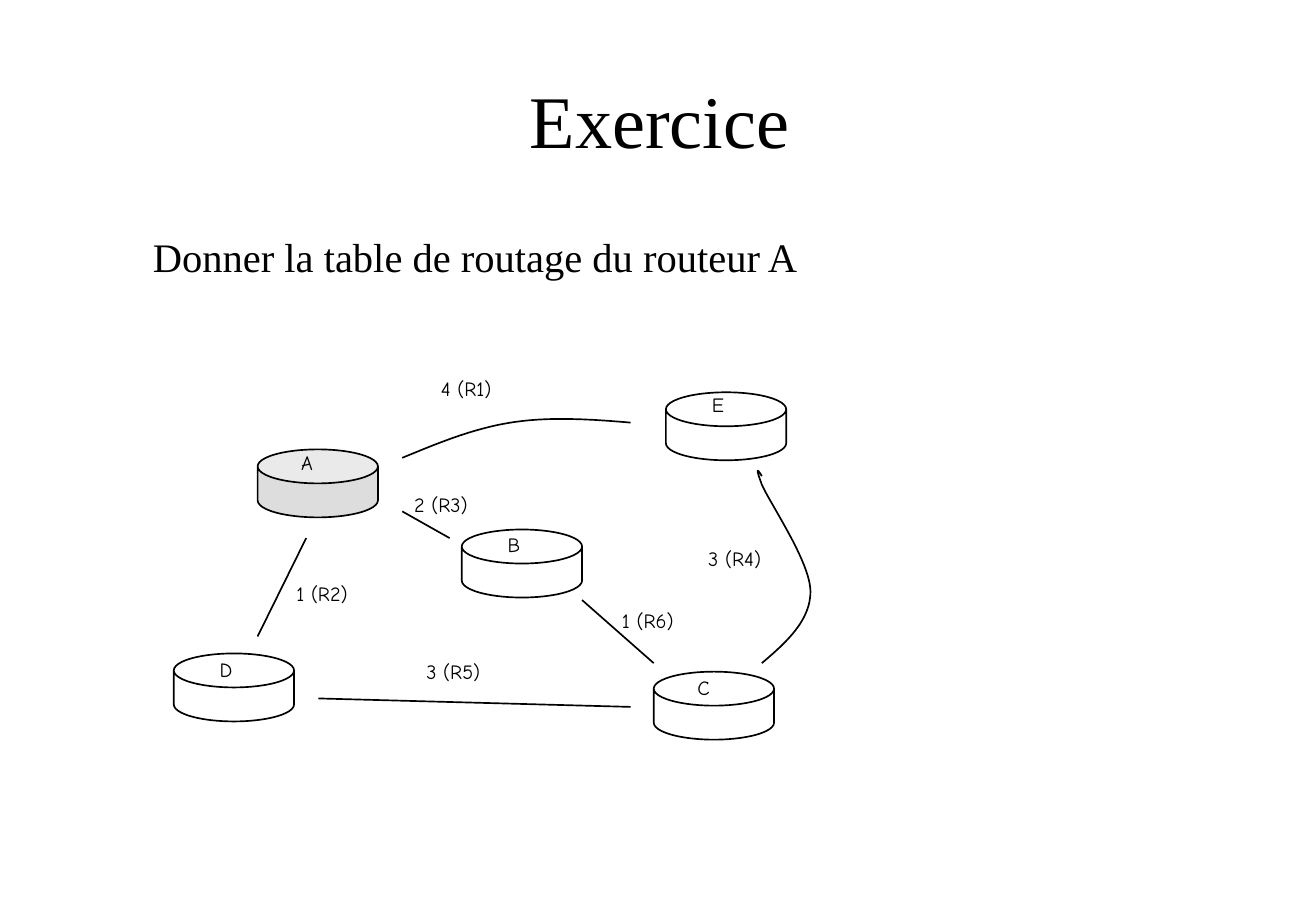
from lxml.etree import SubElement
from pptx import Presentation
from pptx.dml.color import RGBColor
from pptx.enum.shapes import MSO_CONNECTOR as Connector, MSO_SHAPE as Shape
from pptx.enum.text import MSO_ANCHOR as Anchor, MSO_AUTO_SIZE as AutoSize, PP_ALIGN as Align
from pptx.oxml.ns import qn
from pptx.util import Pt

PX = 9144
BLACK = RGBColor(0x00, 0x00, 0x00)
GREY = RGBColor(0xDD, 0xDD, 0xDD)

SLIDE_SIZE = (1083, 750)
TITLE = ("Exercice", (39, 39, 1008, 118))
QUESTION = ("Donner la table de routage du routeur A", (116, 186, 562, 50))
ROUTER_SIZE = (99, 56)
NAME_SIZE = (55, 38)
COST_SIZE = (80, 31)
CURVE_STEPS = 24

ROUTERS = [
    ("A", (212, 370), (26, -4), GREY),
    ("B", (380, 436), (28, -3), None),
    ("C", (538, 553), (26, -2), None),
    ("D", (143, 538), (28, -2), None),
    ("E", (548, 323), (28, -5), None),
]
STRAIGHT_LINKS = [
    ("2 (R3)", (331, 400), (331, 421), (370, 443)),
    ("1 (R2)", (234, 474), (252, 443), (212, 524)),
    ("3 (R5)", (341, 538), (262, 575), (519, 582)),
    ("1 (R6)", (502, 496), (479, 494), (538, 546)),
]
CURVED_LINKS = [
    ("4 (R1)", (353, 305), [(331, 377), (360, 365), (389, 353), (420, 348),
                            (451, 343), (485, 345), (519, 348)]),
    ("3 (R4)", (573, 445), [(627, 392), (624, 387), (621, 383), (627, 399),
                            (634, 415), (667, 463), (667, 487),
                            (667, 511), (647, 529), (627, 546)]),
]

TITLE_FONT = {"name": "Times New Roman", "size": Pt(44)}
QUESTION_FONT = {"name": "Times New Roman", "size": Pt(24)}
LABEL_FONT = {"name": "Comic Neue", "size": Pt(12)}
TITLE_FRAME = {"word_wrap": True, "auto_size": AutoSize.NONE, "vertical_anchor": Anchor.MIDDLE}
TEXT_FRAME = {"word_wrap": True, "auto_size": AutoSize.NONE, "vertical_anchor": Anchor.TOP}


def emu(*lengths):
    return [round(length * PX) for length in lengths]


def apply(target, values):
    for key, value in values.items():
        setattr(target, key, value)


def write(holder, text, frame_format, font_format, align):
    frame = holder.text_frame
    apply(frame, frame_format)
    paragraph = frame.paragraphs[0]
    paragraph.alignment = align
    run = paragraph.add_run()
    run.text = text
    apply(run.font, font_format)
    run.font.color.rgb = BLACK


def add_text(slide, text, box, font_format):
    write(slide.shapes.add_textbox(*emu(*box)), text, TEXT_FRAME, font_format, Align.LEFT)


def outline(part):
    part.line.color.rgb = BLACK
    part.line.width = Pt(1)


def add_router(slide, name, corner, name_offset, fill):
    router = slide.shapes.add_shape(Shape.CAN, *emu(*corner, *ROUTER_SIZE))
    router.shadow.inherit = False
    router.adjustments[0] = 0.5
    if fill is None:
        router.fill.background()
    else:
        router.fill.solid()
        router.fill.fore_color.rgb = fill
    outline(router)
    name_corner = [place + shift for place, shift in zip(corner, name_offset)]
    add_text(slide, name, (*name_corner, *NAME_SIZE), LABEL_FONT)


def add_straight_link(slide, start, end):
    link = slide.shapes.add_connector(Connector.STRAIGHT, *emu(*start, *end))
    SubElement(link._element.spPr, qn("a:effectLst"))
    outline(link)


def bezier(controls, t):
    weights = ((1 - t) ** 3, 3 * t * (1 - t) ** 2, 3 * t * t * (1 - t), t ** 3)
    return [sum(w * value for w, value in zip(weights, axis)) for axis in zip(*controls)]


def add_curved_link(slide, controls):
    points = [
        emu(*bezier(controls[first:first + 4], step / CURVE_STEPS))
        for first in range(0, len(controls) - 1, 3)
        for step in range(1, CURVE_STEPS + 1)
    ]
    builder = slide.shapes.build_freeform(*emu(*controls[0]))
    builder.add_line_segments(points, close=False)
    link = builder.convert_to_shape()
    link.shadow.inherit = False
    link.fill.background()
    outline(link)


def main():
    """Build the routing exercise slide with its network diagram."""
    deck = Presentation()
    deck.slide_width, deck.slide_height = emu(*SLIDE_SIZE)
    slide = deck.slides.add_slide(deck.slide_layouts[5])

    title, title_box = TITLE
    heading = slide.shapes.title
    apply(heading, dict(zip(("left", "top", "width", "height"), emu(*title_box))))
    write(heading, title, TITLE_FRAME, TITLE_FONT, Align.CENTER)
    add_text(slide, *QUESTION, QUESTION_FONT)

    for router in ROUTERS:
        add_router(slide, *router)
    for cost, corner, start, end in STRAIGHT_LINKS:
        add_straight_link(slide, start, end)
        add_text(slide, cost, (*corner, *COST_SIZE), LABEL_FONT)
    for cost, corner, controls in CURVED_LINKS:
        add_curved_link(slide, controls)
        add_text(slide, cost, (*corner, *COST_SIZE), LABEL_FONT)

    deck.save("out.pptx")


if __name__ == "__main__":
    main()
